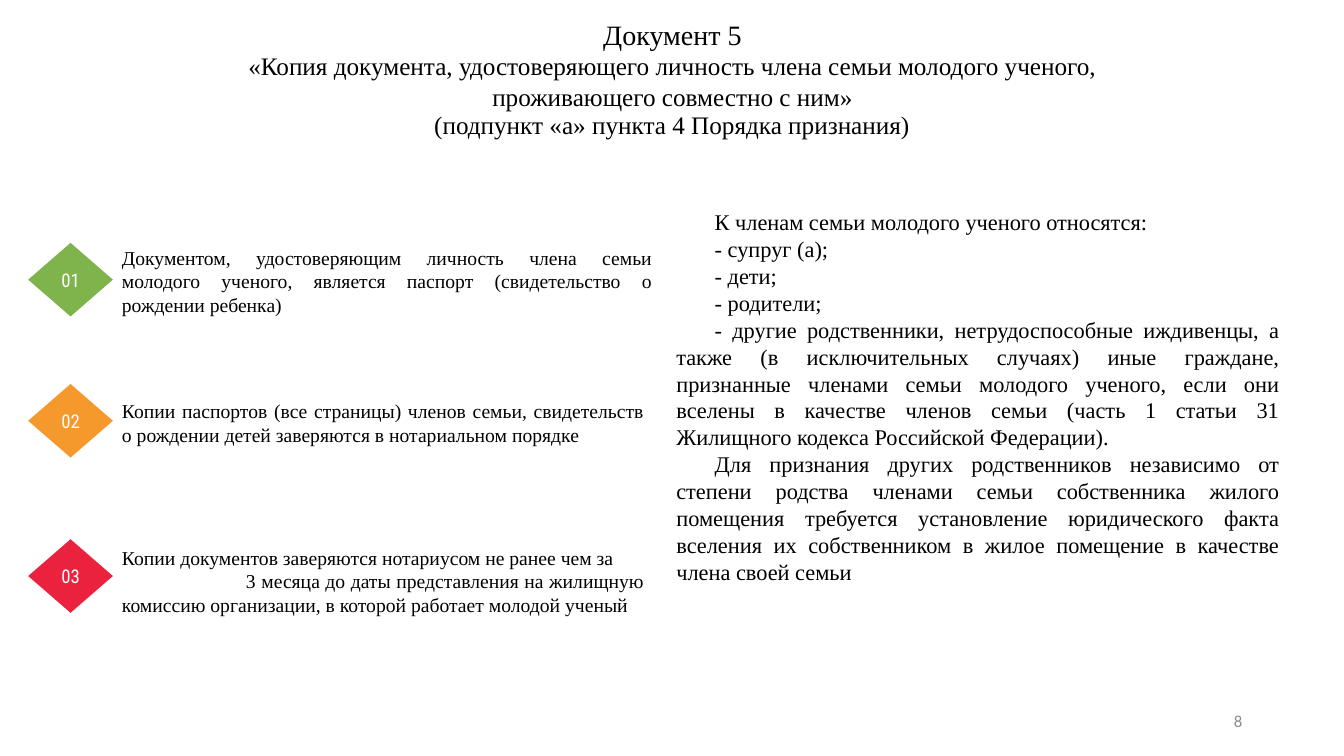
from dataclasses import dataclass

from pptx import Presentation
from pptx.dml.color import RGBColor
from pptx.enum.shapes import MSO_SHAPE
from pptx.enum.text import MSO_ANCHOR, PP_ALIGN
from pptx.slide import Slide
from pptx.text.text import TextFrame
from pptx.util import Inches, Pt

DIAMOND = MSO_SHAPE.DIAMOND
TOP, MIDDLE = MSO_ANCHOR.TOP, MSO_ANCHOR.MIDDLE
CENTER, RIGHT, JUSTIFY = PP_ALIGN.CENTER, PP_ALIGN.RIGHT, PP_ALIGN.JUSTIFY

COLORS = {
    "text": "000000",
    "badge_text": "FFFFFF",
    "page": "8C8C8C",
    "green": "7FB34C",
    "orange": "F5992D",
    "red": "EB223D",
}
SERIF, BADGE_FONT, PAGE_FONT = "Times New Roman", "Roboto Condensed", "Calibri"


@dataclass(frozen=True)
class Line:
    """One paragraph with its look; indent is the first-line indent in inches."""
    text: str
    size: float
    align: PP_ALIGN
    indent: float = 0
    font: str = SERIF
    color: str = "text"


@dataclass(frozen=True)
class Requirement:
    number: str
    color: str
    top: float
    width: float
    height: float
    lines: list[Line]


REQUIREMENTS = [
    Requirement("01", "green", 2.41, 5.56, 0.75, [
        Line("Документом, удостоверяющим личность члена семьи молодого ученого, "
             "является паспорт (свидетельство о рождении ребенка)", 14, JUSTIFY),
    ]),
    Requirement("02", "orange", 3.81, 5.48, 0.77, [
        Line("Копии паспортов (все страницы) членов семьи, свидетельств о рождении "
             "детей заверяются в нотариальном порядке", 14, JUSTIFY),
    ]),
    Requirement("03", "red", 5.35, 5.48, 0.83, [
        Line("Копии документов заверяются нотариусом не ранее чем за", 14, JUSTIFY),
        Line("3 месяца до даты представления на жилищную комиссию организации, "
             "в которой работает молодой ученый", 14, JUSTIFY, indent=1.23),
    ]),
]

FAMILY_MEMBERS = [
    "К членам семьи молодого ученого относятся:",
    "- супруг (а);",
    "- дети;",
    "- родители;",
    "- другие родственники, нетрудоспособные иждивенцы, а также (в исключительных "
    "случаях) иные граждане, признанные членами семьи молодого ученого, если они "
    "вселены в качестве членов семьи (часть 1 статьи 31 Жилищного кодекса "
    "Российской Федерации).",
    "Для признания других родственников независимо от степени родства членами семьи "
    "собственника жилого помещения требуется установление юридического факта "
    "вселения их собственником в жилое помещение в качестве члена своей семьи",
]


def write_lines(frame: TextFrame, lines: list[Line]) -> None:
    for index, line in enumerate(lines):
        paragraph = frame.add_paragraph() if index else frame.paragraphs[0]
        paragraph.text = line.text
        paragraph.alignment = line.align
        if line.indent:
            properties = paragraph._p.get_or_add_pPr()
            properties.set("marL", "0")
            properties.set("indent", str(Inches(line.indent)))
        paragraph.font.name = line.font
        paragraph.font.size = Pt(line.size)
        paragraph.font.color.rgb = RGBColor.from_string(COLORS[line.color])


def set_margins(frame: TextFrame, left: float = 0) -> None:
    """Set the left margin in inches and clear the other three."""
    frame.margin_left = Inches(left)
    frame.margin_top = frame.margin_right = frame.margin_bottom = 0


def add_text(slide: Slide, left: float, top: float, width: float, height: float,
             lines: list[Line], anchor: MSO_ANCHOR = TOP) -> TextFrame:
    frame = slide.shapes.add_textbox(
        Inches(left), Inches(top), Inches(width), Inches(height)).text_frame
    frame.word_wrap = True
    frame.vertical_anchor = anchor
    write_lines(frame, lines)
    return frame


def add_requirement(slide: Slide, item: Requirement) -> None:
    """Draw the numbered diamond and the text to its right."""
    badge = slide.shapes.add_shape(
        DIAMOND, Inches(0.28), Inches(item.top), Inches(0.84), Inches(0.73))
    badge.shadow.inherit = False
    badge.fill.solid()
    badge.fill.fore_color.rgb = RGBColor.from_string(COLORS[item.color])
    badge.line.fill.background()
    number = badge.text_frame
    number.word_wrap = False
    number.vertical_anchor = MIDDLE
    set_margins(number)
    write_lines(number, [Line(item.number, 13.5, CENTER, font=BADGE_FONT, color="badge_text")])

    description = add_text(slide, 0.91, item.top, item.width, item.height, item.lines, MIDDLE)
    set_margins(description, left=0.3)


def main() -> None:
    presentation = Presentation()
    presentation.slide_width = Inches(13.33)
    presentation.slide_height = Inches(7.5)
    slide = presentation.slides.add_slide(presentation.slide_layouts[6])

    add_text(slide, 1.67, 0.12, 10, 1.04, [
        Line("Документ 5", 20, CENTER),
        Line("«Копия документа, удостоверяющего личность члена семьи молодого ученого, "
             "проживающего совместно с ним»", 18, CENTER),
    ])
    add_text(slide, 0, 1.04, 13.33, 0.4,
             [Line("(подпункт «а» пункта 4 Порядка признания)", 18, CENTER)])
    for item in REQUIREMENTS:
        add_requirement(slide, item)
    add_text(slide, 6.61, 2.02, 6.18, 3.87,
             [Line(text, 16, JUSTIFY, indent=0.38) for text in FAMILY_MEMBERS])
    add_text(slide, 9.42, 6.95, 3, 0.4,
             [Line("8", 12, RIGHT, font=PAGE_FONT, color="page")], MIDDLE)

    presentation.save("out.pptx")


if __name__ == "__main__":
    main()
